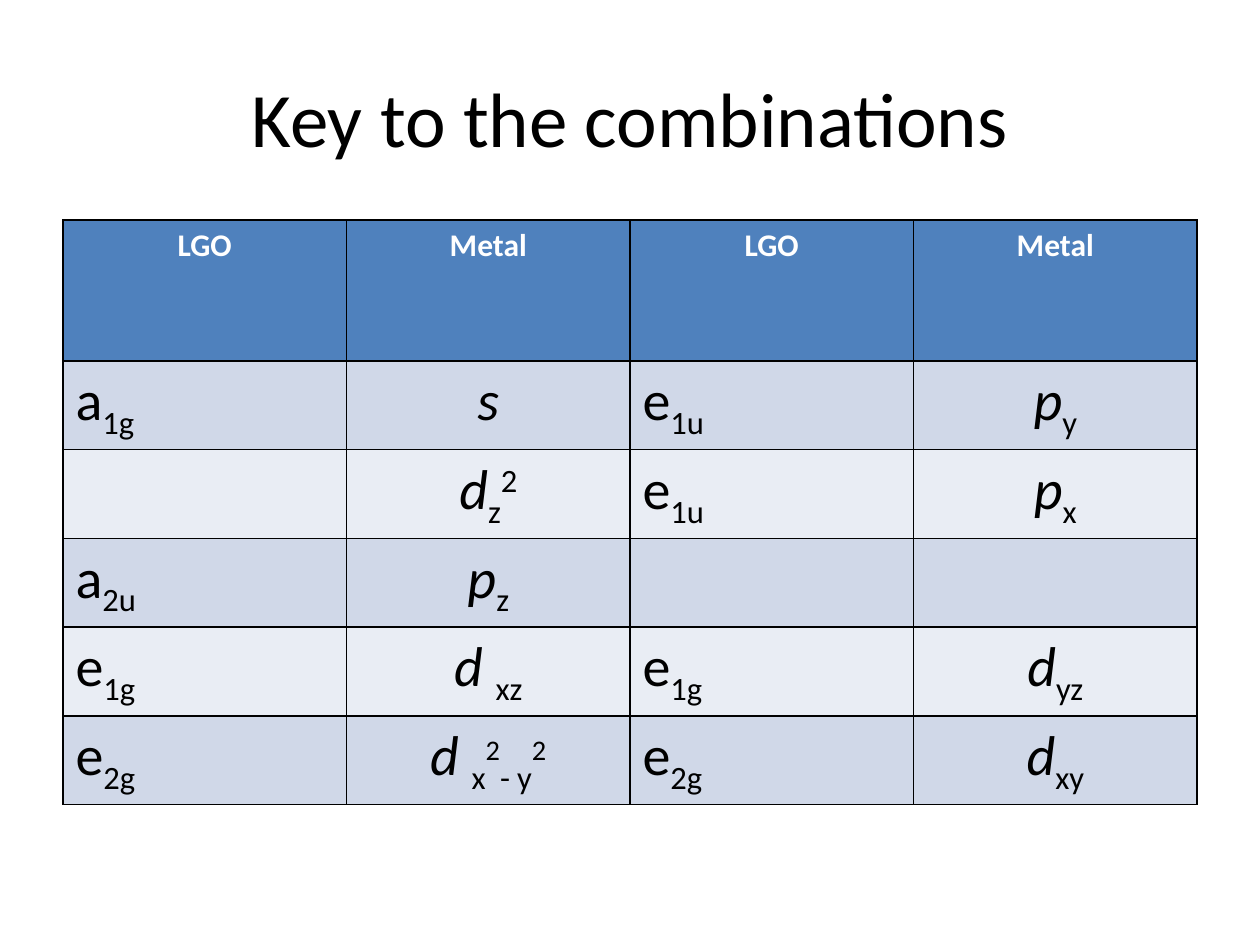
from lxml import etree
from pptx import Presentation
from pptx.dml.color import RGBColor
from pptx.enum.text import MSO_ANCHOR, PP_ALIGN
from pptx.oxml.ns import qn
from pptx.util import Pt

PX = 914400 / 126
LEFT, CENTER = PP_ALIGN.LEFT, PP_ALIGN.CENTER
MIDDLE = MSO_ANCHOR.MIDDLE
FONT = "Calibri"
COLORS = {"text": "000000", "header_text": "FFFFFF", "header": "4F81BD",
          "odd": "D0D8E8", "even": "E9EDF4", "border": "000000"}

# Run formats: size, bold, italic, baseline in thousandths of a percent
FORMATS = {
    "head": (18, True, False, 0),
    "base": (32, False, False, 0),
    "orbital": (32, False, True, 0),
    "sub": (32, False, False, -25000),
    "sup": (32, False, False, 30000),
    "small_sup": (28, False, False, 30000),
}


def px(n):
    return round(n * PX)


def add_borders(cell):
    """Draw a 1 pt line on all sides; call before the cell is filled."""
    tc_pr = cell._tc.get_or_add_tcPr()
    for side in ("lnL", "lnR", "lnT", "lnB"):
        ln = etree.SubElement(tc_pr, qn(f"a:{side}"), w=str(Pt(1)))
        fill = etree.SubElement(ln, qn("a:solidFill"))
        etree.SubElement(fill, qn("a:srgbClr"), val=COLORS["border"])


prs = Presentation()
prs.slide_width, prs.slide_height = px(1260), px(945)
s = prs.slides.add_slide(prs.slide_layouts[5])

title = s.shapes.title
title.left, title.top, title.width, title.height = px(63), px(38), px(1134), px(157)
tf = title.text_frame
tf.text = "Key to the combinations"
tf.vertical_anchor = MIDDLE
p = tf.paragraphs[0]
p.alignment = CENTER
p.font.name, p.font.size = FONT, Pt(44)
p.font.color.rgb = RGBColor.from_string(COLORS["text"])

# Columns alternate between ligand group orbital and metal orbital
header = [[("LGO", "head")], [("Metal", "head")]] * 2
symmetry = {name: [(name[0], "base"), (name[1:], "sub")]
            for name in ("a1g", "a2u", "e1u", "e1g", "e2g")}
metal = {name: [(name[0], "orbital"), (name[1:], "sub")]
         for name in ("py", "px", "pz", "dyz", "dxy")}
rows = [
    header,
    [symmetry["a1g"], [("s", "orbital")], symmetry["e1u"], metal["py"]],
    [[], [("d", "orbital"), ("z", "sub"), ("2", "sup")], symmetry["e1u"], metal["px"]],
    [symmetry["a2u"], metal["pz"], [], []],
    [symmetry["e1g"], [("d ", "orbital"), ("xz", "sub")], symmetry["e1g"], metal["dyz"]],
    [symmetry["e2g"],
     [("d ", "orbital"), ("x", "sub"), ("2", "small_sup"), ("- y", "sub"), ("2", "small_sup")],
     symmetry["e2g"], metal["dxy"]],
]
heights = [141] + [88] * 5

table = s.shapes.add_table(len(rows), 4, px(63), px(220), px(1134), px(sum(heights))).table
for i, row in enumerate(rows):
    table.rows[i].height = px(heights[i])
    band = "header" if i == 0 else "odd" if i % 2 else "even"
    text_color = "header_text" if i == 0 else "text"
    for j, runs in enumerate(row):
        cell = table.cell(i, j)
        add_borders(cell)
        cell.fill.solid()
        cell.fill.fore_color.rgb = RGBColor.from_string(COLORS[band])
        p = cell.text_frame.paragraphs[0]
        p.alignment = CENTER if i == 0 or j % 2 else LEFT
        for text, kind in runs:
            size, bold, italic, baseline = FORMATS[kind]
            r = p.add_run()
            r.text = text
            for name, value in {"name": FONT, "size": Pt(size),
                                "bold": bold, "italic": italic}.items():
                setattr(r.font, name, value)
            r.font.color.rgb = RGBColor.from_string(COLORS[text_color])
            if baseline:
                r._r.get_or_add_rPr().set("baseline", str(baseline))

prs.save("out.pptx")
